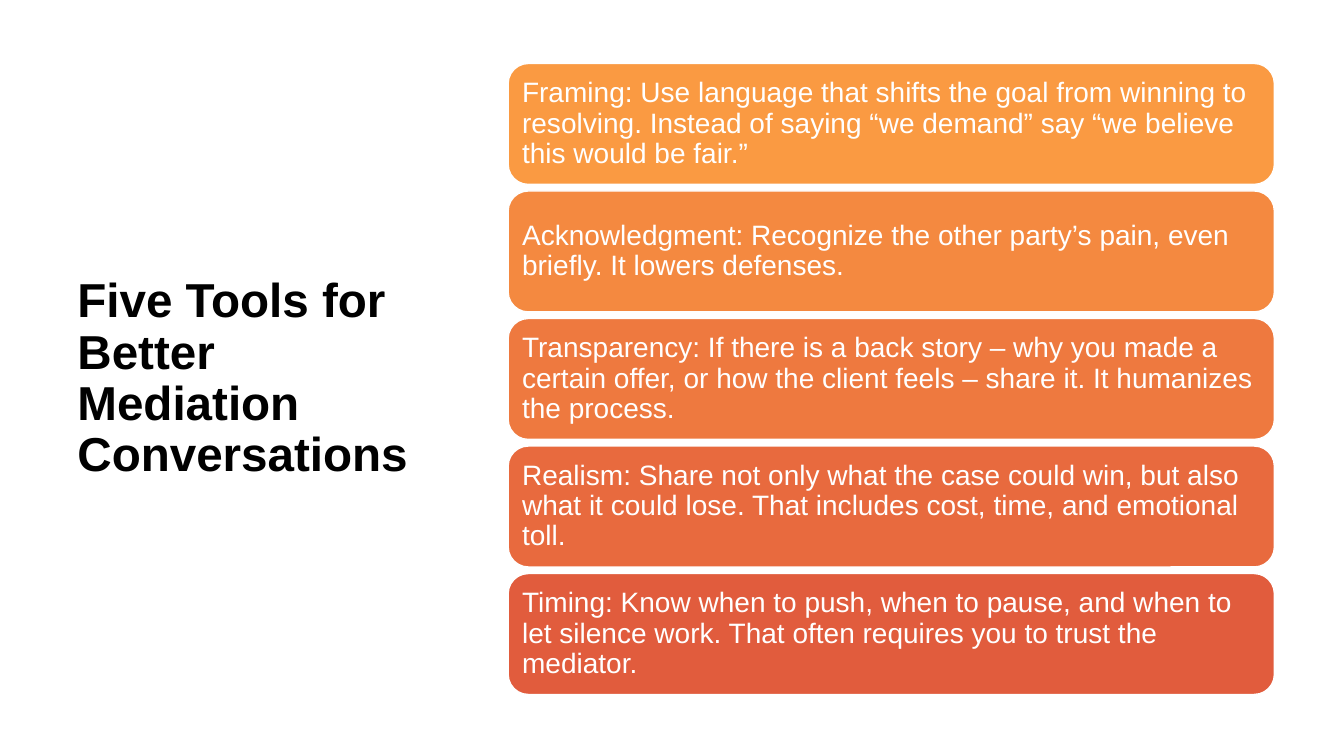
"""Build the slide on five tools for better mediation conversations."""
from pptx import Presentation
from pptx.dml.color import RGBColor
from pptx.enum import shapes, text
from pptx.util import Inches, Pt

TITLE = "Five Tools for Better Mediation Conversations"
TOOLS = [
    ("Framing: Use language that shifts the goal from winning to resolving. "
     "Instead of saying “we demand” say “we believe this would be fair.”", "FA9A42"),
    ("Acknowledgment: Recognize the other party’s pain, even briefly. "
     "It lowers defenses.", "F48940"),
    ("Transparency: If there is a back story – why you made a certain offer, "
     "or how the client feels – share it. It humanizes the process.", "EE793F"),
    ("Realism: Share not only what the case could win, but also what it could lose. "
     "That includes cost, time, and emotional toll.", "E86A3E"),
    ("Timing: Know when to push, when to pause, and when to let silence work. "
     "That often requires you to trust the mediator.", "E15C3D"),
]
THEME = {"font": "Arial", "title": "000000", "card": "FFFFFF", "line": "FFFFFF",
         "title_size": 34, "card_size": 20}
TITLE_BOX = (0.67, 0.6, 3.82, 6.33)
CARD_LEFT, CARD_TOP, CARD_W, CARD_H, CARD_STEP = 5.04, 0.63, 7.6, 1.2, 1.265


def write(sp, words, role, inset_x, inset_y, bold=False):
    tf = sp.text_frame
    tf.word_wrap = True
    tf.vertical_anchor = text.MSO_ANCHOR.MIDDLE
    tf.margin_left = tf.margin_right = Inches(inset_x)
    tf.margin_top = tf.margin_bottom = Inches(inset_y)
    p = tf.paragraphs[0]
    p.text = words
    p.alignment = text.PP_ALIGN.LEFT
    p.line_spacing = 0.9
    p.font.name = THEME["font"]
    p.font.size = Pt(THEME[role + "_size"])
    p.font.bold = bold
    p.font.color.rgb = RGBColor.from_string(THEME[role])


def add_card(s, index, words, color):
    sp = s.shapes.add_shape(
        shapes.MSO_SHAPE.ROUNDED_RECTANGLE, Inches(CARD_LEFT),
        Inches(CARD_TOP + index * CARD_STEP), Inches(CARD_W), Inches(CARD_H))
    sp.shadow.inherit = False
    sp.fill.solid()
    sp.fill.fore_color.rgb = RGBColor.from_string(color)
    sp.line.color.rgb = RGBColor.from_string(THEME["line"])
    sp.line.width = Pt(1)
    write(sp, words, "card", 0.08, 0.08)


def main():
    prs = Presentation()
    prs.slide_width, prs.slide_height = Inches(13.33), Inches(7.5)
    s = prs.slides.add_slide(prs.slide_layouts[6])
    title = s.shapes.add_textbox(*map(Inches, TITLE_BOX))
    write(title, TITLE, "title", 0.1, 0.05, bold=True)
    for index, (words, color) in enumerate(TOOLS):
        add_card(s, index, words, color)
    prs.save("out.pptx")


if __name__ == "__main__":
    main()
